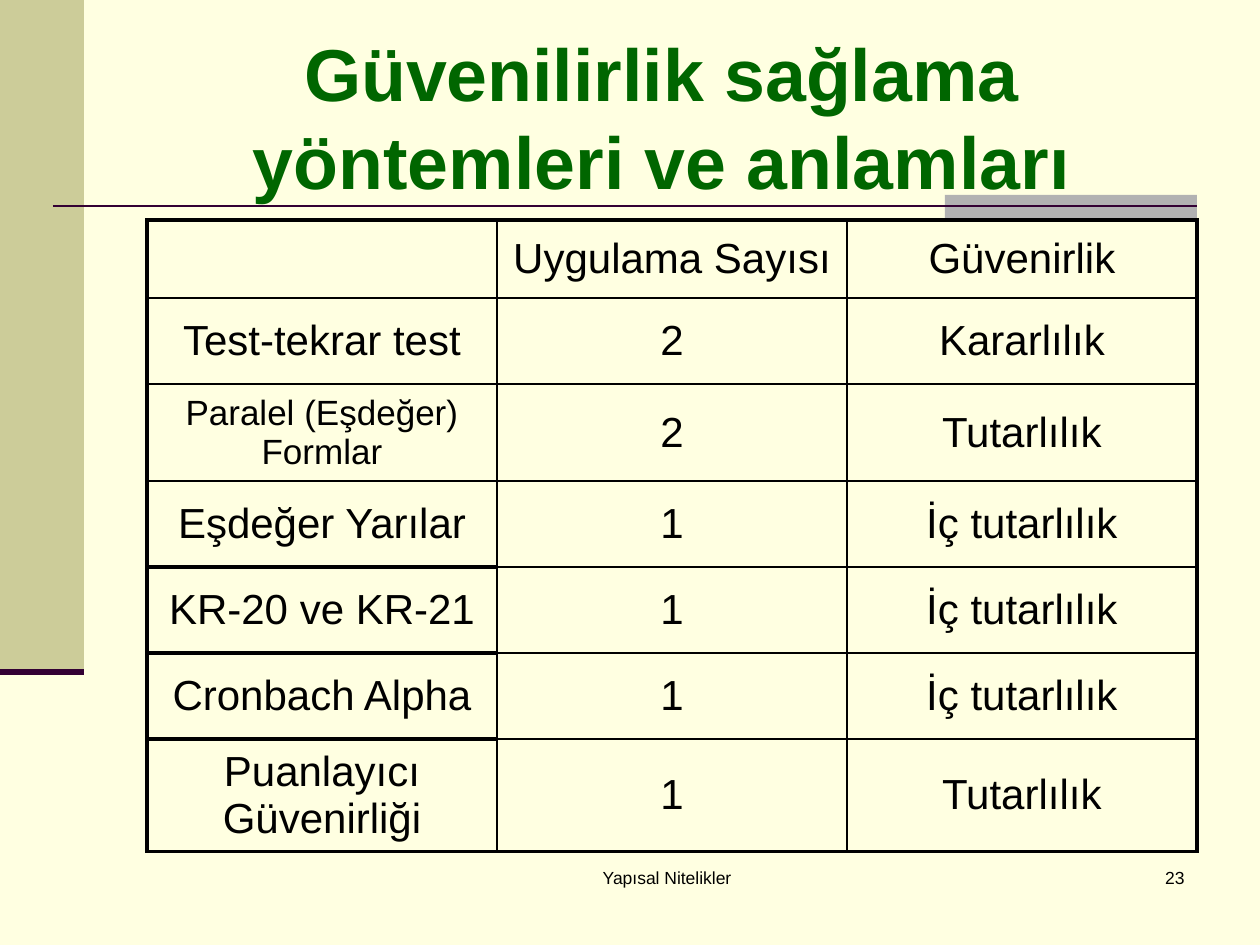
from lxml import etree
from pptx import Presentation
from pptx.dml.color import RGBColor
from pptx.enum.shapes import MSO_CONNECTOR, MSO_SHAPE
from pptx.enum.text import MSO_ANCHOR, MSO_AUTO_SIZE, PP_ALIGN
from pptx.oxml.ns import qn
from pptx.util import Emu, Pt

RECT = MSO_SHAPE.RECTANGLE
LINE = MSO_CONNECTOR.STRAIGHT
MID, TOP = MSO_ANCHOR.MIDDLE, MSO_ANCHOR.TOP
CENTER, RIGHT = PP_ALIGN.CENTER, PP_ALIGN.RIGHT
NONE = MSO_AUTO_SIZE.NONE
SCALE = 914400 / 126
FONT = "Arial"
COLORS = {
    "page": "FFFFE1", "side": "CCCC99", "tab": "B2B2B2",
    "rule": "330033", "title": "006600", "text": "000000",
}
ROWS = [
    (78, ["", "Uygulama Sayısı", "Güvenirlik"]),
    (86, ["Test-tekrar test", "2", "Kararlılık"]),
    (97, ["Paralel (Eşdeğer) Formlar", "2", "Tutarlılık"]),
    (86, ["Eşdeğer Yarılar", "1", "İç tutarlılık"]),
    (86, ["KR-20 ve KR-21", "1", "İç tutarlılık"]),
    (86, ["Cronbach Alpha", "1", "İç tutarlılık"]),
    (113, ["Puanlayıcı Güvenirliği", "1", "Tutarlılık"]),
]
SMALL_ROW = 2
HEAVY_FROM = 3
THIN, THICK = 1, 2.25


def px(*nums):
    return [Emu(round(num * SCALE)) for num in nums]


def color(name):
    return RGBColor.from_string(COLORS[name])


def write(frame, text, size, align, tint="text", bold=False):
    para = frame.paragraphs[0]
    para.alignment = align
    run = para.add_run()
    run.text = text
    font = run.font
    font.name, font.size, font.bold = FONT, Pt(size), bold
    font.color.rgb = color(tint)


def add_block(slide, box, tint):
    shape = slide.shapes.add_shape(RECT, *px(*box))
    shape.shadow.inherit = False
    shape.fill.solid()
    shape.fill.fore_color.rgb = color(tint)
    shape.line.fill.background()


def add_rule(slide, ends, width):
    rule = slide.shapes.add_connector(LINE, *px(*ends))
    rule.line.color.rgb = color("rule")
    rule.line.width = Pt(width)
    etree.SubElement(rule.element.spPr, qn("a:effectLst"))


def set_title(slide, text, box):
    title = slide.shapes.title
    title.left, title.top, title.width, title.height = px(*box)
    title.element.getparent().append(title.element)
    frame = title.text_frame
    frame.word_wrap = True
    frame.auto_size = NONE
    frame.vertical_anchor = MID
    write(frame, text, 42, CENTER, "title", True)


def add_note(slide, text, box, align):
    frame = slide.shapes.add_textbox(*px(*box)).text_frame
    frame.word_wrap = True
    frame.vertical_anchor = TOP
    write(frame, text, 10, align)


def set_edges(cell, widths):
    props = cell._tc.get_or_add_tcPr()
    for spot, (side, width) in enumerate(widths.items()):
        edge = etree.Element(qn("a:ln" + side), w=str(Pt(width)))
        fill = etree.SubElement(edge, qn("a:solidFill"))
        etree.SubElement(fill, qn("a:srgbClr"), val=COLORS["text"])
        props.insert(spot, edge)


def edge_widths(row, col):
    last = len(ROWS) - 1
    heavy = {
        "L": col == 0,
        "R": col == 2,
        "T": row == 0 or (col == 0 and row > HEAVY_FROM),
        "B": row == last or (col == 0 and row >= HEAVY_FROM),
    }
    return {side: THICK if on else THIN for side, on in heavy.items()}


def add_grid(slide, left, top, width):
    high = sum(size for size, _ in ROWS)
    frame = slide.shapes.add_table(len(ROWS), 3, *px(left, top, width, high))
    table = frame.table
    table.first_row = table.horz_banding = False
    for col in table.columns:
        col.width = px(width / 3)[0]
    for row, (size, texts) in enumerate(ROWS):
        table.rows[row].height = px(size)[0]
        for col, text in enumerate(texts):
            cell = table.cell(row, col)
            cell.fill.background()
            cell.vertical_anchor = MID
            set_edges(cell, edge_widths(row, col))
            if text:
                small = row == SMALL_ROW and col == 0
                write(cell.text_frame, text, 20 if small else 24, CENTER)


def main():
    deck = Presentation()
    deck.slide_width, deck.slide_height = px(1260, 945)
    slide = deck.slides.add_slide(deck.slide_layouts[5])
    slide.background.fill.solid()
    slide.background.fill.fore_color.rgb = color("page")
    add_block(slide, (0, 0, 84, 672), "side")
    add_block(slide, (945, 195, 252, 25), "tab")
    add_rule(slide, (53, 206, 1197, 206), 1.5)
    add_rule(slide, (0, 672, 84, 672), 3.5)
    add_note(slide, "Yapısal Nitelikler", (462, 861, 410, 63), CENTER)
    add_note(slide, "23", (935, 861, 262, 63), RIGHT)
    set_title(slide, "Güvenilirlik sağlama yöntemleri ve anlamları",
              (126, 38, 1071, 157))
    add_grid(slide, 147, 220, 1050)
    deck.save("out.pptx")


if __name__ == "__main__":
    main()
